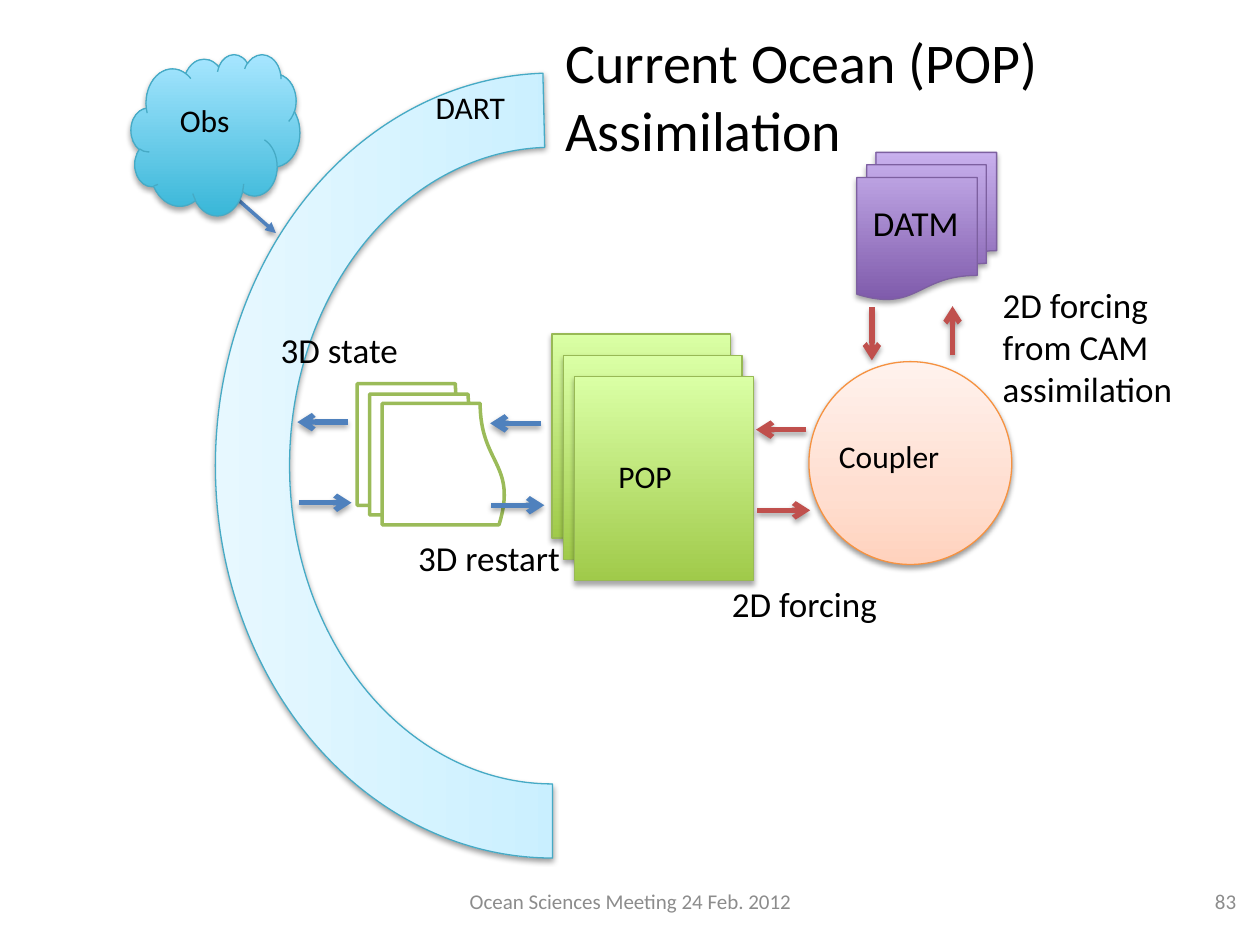
from dataclasses import dataclass

from lxml.etree import SubElement
from pptx import Presentation
from pptx.dml.color import RGBColor
from pptx.enum.shapes import MSO_CONNECTOR, MSO_SHAPE
from pptx.enum.text import MSO_ANCHOR, MSO_AUTO_SIZE, PP_ALIGN
from pptx.oxml.ns import qn
from pptx.util import Inches, Pt


@dataclass(frozen=True)
class Theme:
    font: str = "Calibri"
    text: str = "000000"
    muted: str = "8C8C8C"
    blue: str = "4F81BD"
    red: str = "C0504D"
    aqua: str = "46AAC5"
    green: str = "98B955"
    sheet: str = "9BBB59"
    orange: str = "F69240"
    purple: str = "7D60A0"
    title: int = 32
    label: int = 20
    name: int = 18
    footer: int = 12
    arc_fill: tuple = ((0, "A7E6FF"), (35, "C1EDFF"), (100, "E7F8FF"))
    cloud_fill: tuple = ((0, "39B7D8"), (100, "A7E6FF"))
    pop_fill: tuple = ((0, "A0CA4A"), (100, "DAFFA5"))
    coupler_fill: tuple = ((0, "FFD2BD"), (35, "FFDED0"), (100, "FFF2ED"))
    datm_fill: tuple = ((0, "7F5BAB"), (100, "C8B0ED"))
    soft_shadow: tuple = (38, 1.6)
    firm_shadow: tuple = (35, 1.8)


T = Theme()


def add_shadow(sp, opacity, distance):
    """Drop a black shadow straight down; call after fill and line are set."""
    effects = SubElement(sp._element.spPr, qn("a:effectLst"))
    shadow = SubElement(effects, qn("a:outerShdw"), blurRad=str(Pt(3.1)),
                        dist=str(Pt(distance)), dir="5400000", rotWithShape="0")
    color = SubElement(shadow, qn("a:srgbClr"), val="000000")
    SubElement(color, qn("a:alpha"), val=str(opacity * 1000))


def add_gradient(sp, stops):
    """Fill from the bottom up with (percent, colour) stops."""
    sp.fill.gradient()
    sp.fill.gradient_angle = 90
    stop_list = sp._element.spPr.find(qn("a:gradFill")).find(qn("a:gsLst"))
    for old in list(stop_list):
        stop_list.remove(old)
    for percent, color in stops:
        stop = SubElement(stop_list, qn("a:gs"), pos=str(percent * 1000))
        SubElement(stop, qn("a:srgbClr"), val=color)


prs = Presentation()
prs.slide_width, prs.slide_height = Inches(10), Inches(7.5)
s = prs.slides.add_slide(prs.slide_layouts[6])

# Arrows: start, end, colour, width, head type, both ends, shadow
arrows = [((2.19, 1.85), (1.68, 1.4), T.blue, 2, "triangle", True, T.soft_shadow)]
arrows += [(start, end, color, 3, "arrow", False, T.firm_shadow)
           for start, end, color in [
               ((6.01, 4.05), (6.43, 4.05), T.red),
               ((6.4, 3.41), (6, 3.41), T.red),
               ((3.9, 4.01), (4.32, 4.01), T.blue),
               ((4.29, 3.36), (3.89, 3.36), T.blue),
               ((2.37, 3.99), (2.79, 3.99), T.blue),
               ((2.76, 3.35), (2.36, 3.35), T.blue),
               ((6.92, 2.44), (6.92, 2.86), T.red),
               ((7.56, 2.82), (7.56, 2.43), T.red)]]

# Shapes: kind, box, rotation, fill, line colour, line width, shadow
arc = (MSO_SHAPE.BLOCK_ARC, (1.27, 1.02, 6.23, 5.35), 270,
       T.arc_fill, T.aqua, 0.75, T.soft_shadow)
nodes = [
    (MSO_SHAPE.CLOUD, (1.04, 0.43, 1.34, 1.28), 0,
     T.cloud_fill, T.aqua, 0.75, T.firm_shadow),
    (MSO_SHAPE.OVAL, (6.42, 2.87, 1.61, 1.61), 0,
     T.coupler_fill, T.orange, 0.75, T.soft_shadow),
    (MSO_SHAPE.FLOWCHART_MULTIDOCUMENT, (2.86, 3.02, 1.12, 1.17), 270,
     "FFFFFF", T.sheet, 2, None),
    (MSO_SHAPE.FLOWCHART_MULTIDOCUMENT, (6.8, 1.21, 1.11, 1.17), 0,
     T.datm_fill, T.purple, 0.75, T.firm_shadow),
]
nodes += [(MSO_SHAPE.RECTANGLE, (4.38 + 0.09 * i, 2.65 + 0.17 * i, 1.42, 1.62), 0,
           T.pop_fill, T.green, 0.75, T.firm_shadow) for i in range(3)]

# The arc and the observation arrow lie behind the other shapes
for item in [arc, arrows[0], *nodes, *arrows[1:]]:
    if item in arrows:
        start, end, color, width, head, both_ends, shadow = item
        sp = s.shapes.add_connector(MSO_CONNECTOR.STRAIGHT,
                                    *(Inches(v) for v in start + end))
    else:
        kind, box, rotation, fill, color, width, shadow = item
        sp = s.shapes.add_shape(kind, *(Inches(v) for v in box))
        sp.rotation = rotation
        if isinstance(fill, str):
            sp.fill.solid()
            sp.fill.fore_color.rgb = RGBColor.from_string(fill)
        else:
            add_gradient(sp, fill)
        if kind == MSO_SHAPE.BLOCK_ARC:
            for i, value in enumerate((108, 215.16, 0.11)):
                sp.adjustments[i] = value
    sp.line.color.rgb = RGBColor.from_string(color)
    sp.line.width = Pt(width)
    if item in arrows:
        ln = sp.line._get_or_add_ln()
        for tag in ("a:headEnd", "a:tailEnd") if both_ends else ("a:tailEnd",):
            SubElement(ln, qn(tag), type=head)
    if shadow:
        add_shadow(sp, *shadow)
    else:
        sp.shadow.inherit = False

# Texts: lines, box, size, format that differs from the default
grow = {"auto_size": MSO_AUTO_SIZE.SHAPE_TO_FIT_TEXT}
one_line = {**grow, "word_wrap": False}
middle = {"vertical_anchor": MSO_ANCHOR.MIDDLE}
texts = [
    (["Obs"], (1.33, 0.75, 0.84, 0.51), T.name, grow),
    (["DART"], (3.36, 0.65, 0.95, 0.51), T.name, one_line),
    (["POP"], (4.81, 3.58, 0.77, 0.5), T.name, one_line),
    (["Coupler"], (6.56, 3.42, 1.27, 0.5), T.name, one_line),
    (["2D forcing"], (5.71, 4.57, 1.36, 0.44), T.label, one_line),
    (["3D restart"], (3.22, 4.21, 1.34, 0.44), T.label, one_line),
    (["3D state"], (2.13, 2.56, 1.14, 0.44), T.label, one_line),
    (["2D forcing", "from CAM", "assimilation"],
     (7.86, 2.2, 1.81, 1.11), T.label, grow),
    (["DATM"], (6.83, 1.55, 0.89, 0.44), T.label, one_line),
    (["Current Ocean (POP) Assimilation"], (4.39, 0.08, 4.1, 1.35), T.title, middle),
    (["Ocean Sciences Meeting 24 Feb. 2012"], (3.42, 6.95, 3.17, 0.4), T.footer, middle),
    (["83"], (7.58, 6.95, 2.33, 0.4), T.footer, middle),
]
footer_align = {"83": PP_ALIGN.RIGHT}
for lines, box, size, frame_format in texts:
    tf = s.shapes.add_textbox(*(Inches(v) for v in box)).text_frame
    for name, value in {"word_wrap": True, **frame_format}.items():
        setattr(tf, name, value)
    is_footer = size == T.footer
    for i, line in enumerate(lines):
        p = tf.paragraphs[0] if i == 0 else tf.add_paragraph()
        if is_footer:
            p.alignment = footer_align.get(line, PP_ALIGN.CENTER)
        r = p.add_run()
        r.text = line
        for name, value in {"name": T.font, "size": Pt(size)}.items():
            setattr(r.font, name, value)
        r.font.color.rgb = RGBColor.from_string(T.muted if is_footer else T.text)

prs.save("out.pptx")
